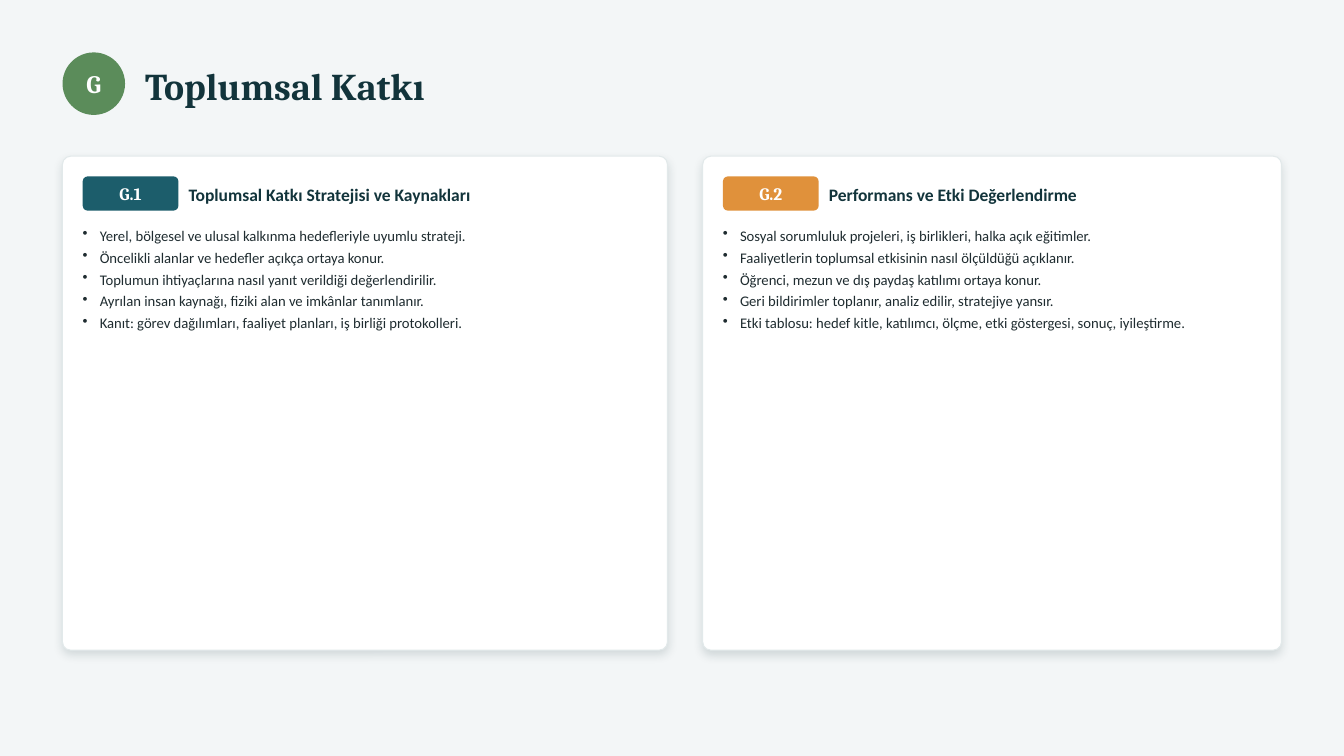
from lxml.etree import SubElement
from pptx import Presentation
from pptx.dml.color import RGBColor
from pptx.enum.shapes import MSO_SHAPE
from pptx.enum.text import MSO_ANCHOR, MSO_AUTO_SIZE, PP_ALIGN
from pptx.oxml.ns import qn
from pptx.util import Inches, Pt

CARD_TOP, CARD_HEIGHT, PAD = 1.55, 4.9, 0.2
BADGE_WIDTH, BADGE_HEIGHT, BADGE_GAP = 0.95, 0.34, 0.1

CARDS = [
    (0.62, 6, "1C5D6B", "G.1", "Toplumsal Katkı Stratejisi ve Kaynakları", [
        "Yerel, bölgesel ve ulusal kalkınma hedefleriyle uyumlu strateji.",
        "Öncelikli alanlar ve hedefler açıkça ortaya konur.",
        "Toplumun ihtiyaçlarına nasıl yanıt verildiği değerlendirilir.",
        "Ayrılan insan kaynağı, fiziki alan ve imkânlar tanımlanır.",
        "Kanıt: görev dağılımları, faaliyet planları, iş birliği protokolleri.",
    ]),
    (6.97, 5.74, "E0913B", "G.2", "Performans ve Etki Değerlendirme", [
        "Sosyal sorumluluk projeleri, iş birlikleri, halka açık eğitimler.",
        "Faaliyetlerin toplumsal etkisinin nasıl ölçüldüğü açıklanır.",
        "Öğrenci, mezun ve dış paydaş katılımı ortaya konur.",
        "Geri bildirimler toplanır, analiz edilir, stratejiye yansır.",
        "Etki tablosu: hedef kitle, katılımcı, ölçme, etki göstergesi, sonuç, iyileştirme.",
    ]),
]


def rgb(value):
    return RGBColor.from_string(value)


class Deck:
    heading_font = "Cambria"
    body_font = "Calibri"
    dark, ink, white = "12343B", "1F2C30", "FFFFFF"
    border, background = "E2E9EA", "F3F6F7"

    def __init__(self, prs):
        self.s = prs.slides.add_slide(prs.slide_layouts[5])
        fill = self.s.background.fill
        fill.solid()
        fill.fore_color.rgb = rgb(self.background)

    def set_text(self, sp, lines, font, size, color, bold=True,
                 align=PP_ALIGN.LEFT, anchor=MSO_ANCHOR.MIDDLE, bullets=False):
        tf = sp.text_frame
        tf.text = "\n".join(lines)
        tf.word_wrap = True
        tf.auto_size = MSO_AUTO_SIZE.NONE
        tf.vertical_anchor = anchor
        tf.margin_left = tf.margin_right = tf.margin_top = tf.margin_bottom = 0
        for p in tf.paragraphs:
            p.alignment = align
            if bullets:
                self.bullet(p)
            for r in p.runs:
                r.font.name = font
                r.font.size = Pt(size)
                r.font.bold = bold
                r.font.color.rgb = rgb(color)

    def bullet(self, p):
        pPr = p._p.get_or_add_pPr()
        pPr.set("marL", str(Inches(0.17)))
        pPr.set("indent", str(-Inches(0.17)))
        SubElement(pPr, qn("a:buChar"), char="•")
        p.space_after = Pt(3)

    def title(self, text, x, y, w, h):
        sp = self.s.shapes.title
        sp.left, sp.top, sp.width, sp.height = map(Inches, (x, y, w, h))
        self.set_text(sp, [text], self.heading_font, 27, self.dark)

    def text(self, lines, x, y, w, h, size, color, **style):
        sp = self.s.shapes.add_textbox(*map(Inches, (x, y, w, h)))
        self.set_text(sp, lines, self.body_font, size, color, **style)

    def shape(self, kind, x, y, w, h, fill, radius=None):
        sp = self.s.shapes.add_shape(kind, *map(Inches, (x, y, w, h)))
        sp.shadow.inherit = False
        sp.fill.solid()
        sp.fill.fore_color.rgb = rgb(fill)
        sp.line.fill.background()
        if radius:
            sp.adjustments[0] = radius / min(w, h)
        return sp

    def badge(self, kind, label, x, y, w, h, fill, size, radius=None):
        sp = self.shape(kind, x, y, w, h, fill, radius)
        self.set_text(sp, [label], self.heading_font, size, self.white,
                      align=PP_ALIGN.CENTER)

    def panel(self, x, y, w, h):
        sp = self.shape(MSO_SHAPE.ROUNDED_RECTANGLE, x, y, w, h, self.white, 0.08)
        sp.line.color.rgb = rgb(self.border)
        sp.line.width = Pt(0.75)
        effects = sp._element.spPr.find(qn("a:effectLst"))
        shadow = SubElement(effects, qn("a:outerShdw"), blurRad=str(Pt(7)),
                            dist=str(Pt(3)), dir="5400000", algn="t",
                            rotWithShape="0")
        color = SubElement(shadow, qn("a:srgbClr"), val="0C2A30")
        SubElement(color, qn("a:alpha"), val="14000")

    def card(self, x, w, accent, code, heading, points):
        left, inner = x + PAD, w - 2 * PAD
        offset = BADGE_WIDTH + BADGE_GAP
        self.panel(x, CARD_TOP, w, CARD_HEIGHT)
        self.badge(MSO_SHAPE.ROUNDED_RECTANGLE, code, left, CARD_TOP + PAD,
                   BADGE_WIDTH, BADGE_HEIGHT, accent, 12.5, 0.05)
        self.text([heading], left + offset, 1.73, inner - offset, 0.4,
                  12.5, self.dark)
        self.text(points, left, 2.25, inner, 4, 10.5, self.ink, bold=False,
                  anchor=MSO_ANCHOR.TOP, bullets=True)


def main():
    prs = Presentation()
    prs.slide_width, prs.slide_height = Inches(13.33), Inches(7.5)
    deck = Deck(prs)
    deck.badge(MSO_SHAPE.OVAL, "G", 0.62, 0.52, 0.62, 0.62, "5B8C5A", 18)
    deck.title("Toplumsal Katkı", 1.44, 0.5, 11.27, 0.7)
    for card in CARDS:
        deck.card(*card)
    prs.save("out.pptx")


if __name__ == "__main__":
    main()
